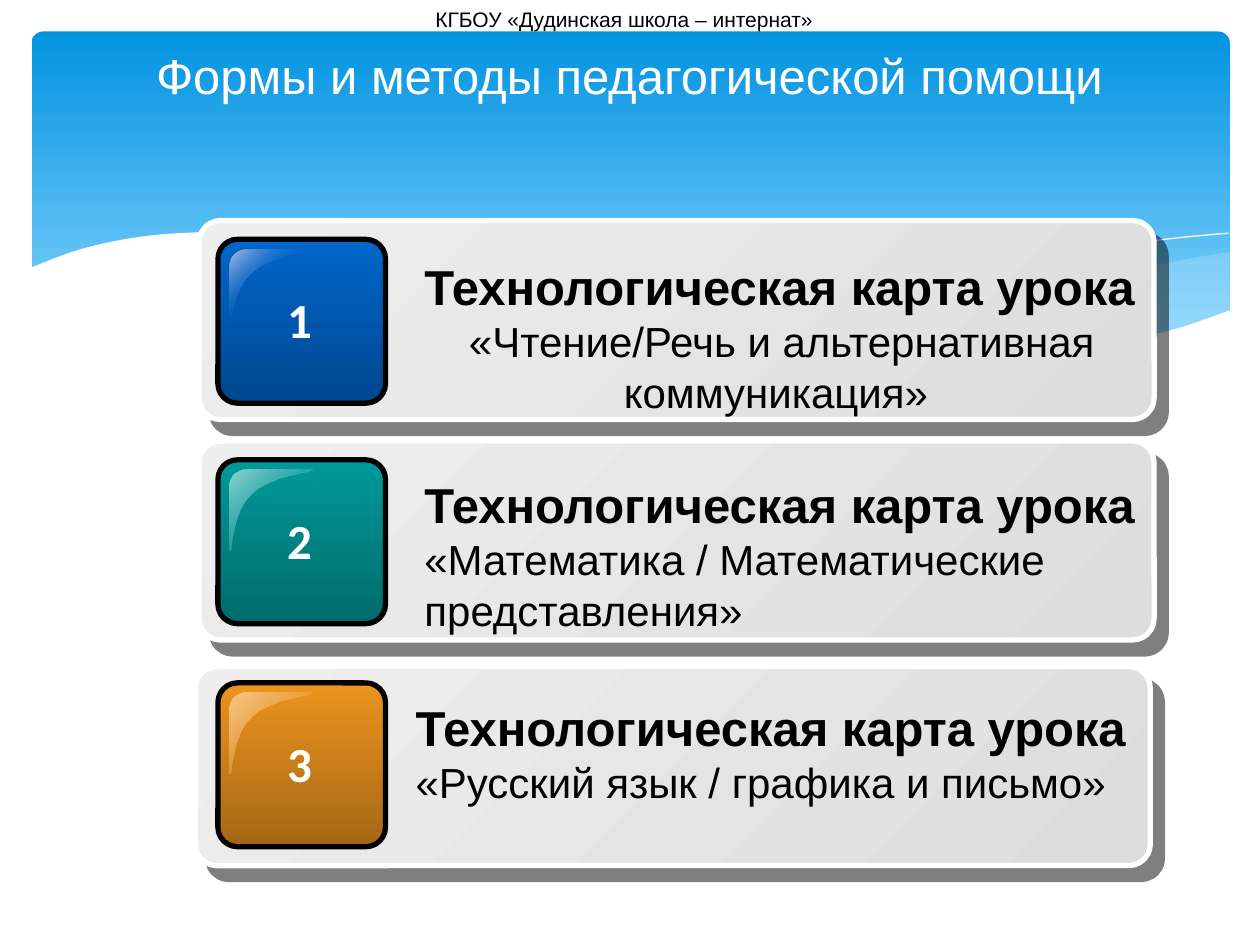
from dataclasses import dataclass

import lxml.etree
import pptx
import pptx.dml.color
import pptx.enum.shapes
import pptx.enum.text
import pptx.oxml.ns
import pptx.util

Inches = pptx.util.Inches
Pt = pptx.util.Pt
qn = pptx.oxml.ns.qn
CENTER = pptx.enum.text.PP_ALIGN.CENTER


@dataclass(frozen=True)
class Theme:
    body_font: str = "Arial"
    number_font: str = "Calibri"
    heading_size: int = 28
    subject_size: int = 24
    school_size: int = 12
    white: str = "FFFFFF"
    black: str = "000000"
    haze: str = "C6E7FC"
    sky: tuple = ((0, "0293E0", 100), (90, "83D3FE", 100))
    panel: tuple = ((0, "EEEEEE", 100), (100, "DDDDDD", 100))
    blue: tuple = ((0, "0066CC", 100), (100, "00478E", 100))
    teal: tuple = ((0, "009999", 100), (100, "006B6B", 100))
    orange: tuple = ((0, "EC941E", 100), (100, "A56715", 100))
    blue_gloss: tuple = ((0, "B5C0E5", 100), (50, "0066CC", 0), (100, "B5C0E5", 100))
    teal_gloss: tuple = ((0, "93D4D4", 100), (100, "009999", 0))
    orange_gloss: tuple = ((0, "F6CB92", 100), (100, "EC941E", 0))


THEME = Theme()

# Knots of the header waves, in inches
RIGHT_HAZE_TOP = [(9.76, 2), (9.35, 2.07), (8.61, 2.23), (7.79, 2.42), (6.61, 2.65)]
RIGHT_HAZE_BOTTOM = [(6.61, 2.65), (7.19, 2.72), (7.69, 2.77), (8.24, 2.77),
                     (8.81, 2.73), (9.28, 2.63), (9.76, 2.47)]
LONG_HAZE_TOP = [(8.93, 2.73), (8.07, 2.6), (7.06, 2.4), (6.29, 2.22), (5.55, 2.05),
                 (4.89, 1.94), (4.2, 1.87), (3.61, 1.85), (2.86, 1.91)]
LONG_HAZE_BOTTOM = [(2.86, 1.91), (3.62, 2.03), (4.49, 2.22), (5.66, 2.48), (6.5, 2.64),
                    (7.22, 2.74), (7.85, 2.78), (8.38, 2.78), (8.93, 2.73)]
LONG_CREST = [(3.09, 1.95), (3.44, 1.9), (4.01, 1.87), (4.69, 1.89), (5.56, 1.97),
              (6.65, 2.13), (7.6, 2.33), (8.31, 2.51), (9.07, 2.72)]
RIGHT_CREST = [(6.13, 2.57), (6.95, 2.35), (7.76, 2.16), (8.66, 1.99), (9.24, 1.9), (9.75, 1.85)]
PAPER_EDGE = [(9.77, 2.46), (9.3, 2.62), (8.75, 2.73), (8.09, 2.77), (7.26, 2.72),
              (6.26, 2.58), (5.29, 2.39), (4.47, 2.2), (3.65, 2.02), (2.92, 1.9),
              (2.3, 1.85), (1.77, 1.84), (1.19, 1.87), (0.67, 1.97), (0.23, 2.13)]


def rgb(color):
    return pptx.dml.color.RGBColor.from_string(color)


def add_color(parent, color, alpha):
    node = lxml.etree.SubElement(parent, qn("a:srgbClr"), val=color)
    if alpha < 100:
        lxml.etree.SubElement(node, qn("a:alpha"), val=str(alpha * 1000))


def fill_solid(shape, color, alpha=100):
    shape.fill.solid()
    shape.fill.fore_color.rgb = rgb(color)
    if alpha < 100:
        node = shape.fill._xPr.find(qn("a:solidFill"))[0]
        lxml.etree.SubElement(node, qn("a:alpha"), val=str(alpha * 1000))


def fill_gradient(shape, stops, angle):
    """Fill with (position, colour, opacity) stops; the angle runs clockwise."""
    shape.fill.gradient()
    shape.fill.gradient_angle = 360 - angle
    stop_list = shape.fill._xPr.find(qn("a:gradFill")).find(qn("a:gsLst"))
    for old in list(stop_list):
        stop_list.remove(old)
    for position, color, alpha in stops:
        stop = lxml.etree.SubElement(stop_list, qn("a:gs"), pos=str(position * 1000))
        add_color(stop, color, alpha)


def set_outline(shape, color=None, width=0):
    if color is None:
        shape.line.fill.background()
    else:
        shape.line.color.rgb = rgb(color)
        shape.line.width = Pt(width)


def add_drop_shadow(shape):
    effects = shape._element.spPr.find(qn("a:effectLst"))
    shadow = lxml.etree.SubElement(effects, qn("a:outerShdw"), blurRad="0",
                                   dist=str(Pt(10.6)), dir=str(49 * 60000),
                                   algn="ctr", rotWithShape="0")
    add_color(shadow, THEME.black, 50)


def add_rounded(page, left, top, width, height, radius, stops, angle, outline=None):
    shape = page.shapes.add_shape(pptx.enum.shapes.MSO_SHAPE.ROUNDED_RECTANGLE,
                                  Inches(left), Inches(top), Inches(width), Inches(height))
    shape.adjustments[0] = radius
    shape.shadow.inherit = False
    fill_gradient(shape, stops, angle)
    set_outline(shape, outline, 3)
    return shape


def add_outline_shape(page, points, close=True):
    first, *rest = [(Inches(x), Inches(y)) for x, y in points]
    builder = page.shapes.build_freeform(*first, scale=1.0)
    builder.add_line_segments(rest, close=close)
    shape = builder.convert_to_shape()
    shape.shadow.inherit = False
    return shape


def bezier(start, pull_a, pull_b, end, steps=8):
    return [tuple((1 - t) ** 3 * a + 3 * (1 - t) ** 2 * t * b + 3 * (1 - t) * t * t * c + t ** 3 * d
                  for a, b, c, d in zip(start, pull_a, pull_b, end))
            for t in (step / steps for step in range(steps + 1))]


def smooth(knots):
    """Run a Catmull-Rom curve through the knots."""
    padded = [knots[0], *knots, knots[-1]]
    points = []
    for before, start, end, after in zip(padded, padded[1:], padded[2:], padded[3:]):
        pull_a = [s + (e - b) / 6 for b, s, e in zip(before, start, end)]
        pull_b = [e - (a - s) / 6 for s, e, a in zip(start, end, after)]
        points += bezier(start, pull_a, pull_b, end)
    return points


def write(para, text, *, size, color, font=THEME.body_font, bold=False, align=None, indent=0):
    span = para.add_run()
    span.text = text
    span.font.name, span.font.size, span.font.bold = font, Pt(size), bold
    span.font.color.rgb = rgb(color)
    para.alignment = align
    if indent:
        props = para._p.get_or_add_pPr()
        props.set("marL", str(Inches(indent)))
        props.set("indent", "0")


def add_text(page, left, top, width, height, lines, wrap=True):
    """Add a text box; lines holds (text, format) pairs, one a paragraph."""
    box = page.shapes.add_textbox(Inches(left), Inches(top), Inches(width), Inches(height))
    frame = box.text_frame
    frame.word_wrap = wrap
    for index, (text, style) in enumerate(lines):
        para = frame.add_paragraph() if index else frame.paragraphs[0]
        write(para, text, **style)


def add_header(page):
    add_rounded(page, 0.25, 0.25, 9.51, 2.7, 0.034, THEME.sky, 90)
    for top, bottom, alpha in ((RIGHT_HAZE_TOP, RIGHT_HAZE_BOTTOM, 29),
                               (LONG_HAZE_TOP, LONG_HAZE_BOTTOM, 40)):
        haze = add_outline_shape(page, smooth(top) + smooth(bottom))
        fill_solid(haze, THEME.haze, alpha)
        set_outline(haze)
    for knots in (LONG_CREST, RIGHT_CREST):
        crest = add_outline_shape(page, smooth(knots), close=False)
        crest.fill.background()
        set_outline(crest, THEME.white)
    paper = add_outline_shape(page, smooth(PAPER_EDGE) + [(0.23, 3.29), (9.77, 3.29)])
    fill_solid(paper, THEME.white)
    set_outline(paper)


def add_badge(page, number, top, stops, gloss_stops):
    add_rounded(page, 1.73, top, 1.33, 1.3, 0.119, stops, 90, THEME.black)
    x, y = 1.82, top + 0.08
    curves = (((0.13, 0), (0.06, 0), (0, 0.06), (0, 0.13)),
              ((0, 0.64), (0.03, 0.65), (0.01, 0.33), (0.18, 0.19)),
              ((0.18, 0.19), (0.34, 0.04), (0.66, 0.03), (0.66, 0)))
    gloss = add_outline_shape(page, [(x + dx, y + dy) for curve in curves for dx, dy in bezier(*curve)])
    fill_gradient(gloss, gloss_stops, 45)
    set_outline(gloss)
    style = dict(size=THEME.heading_size, color=THEME.white, font=THEME.number_font, bold=True)
    add_text(page, 2.18, top + 0.35, 0.42, 0.57, [(str(number), style)], wrap=False)


def add_card(page, number, panel_at, badge_top, text_at, subject, align, stops, gloss_stops):
    panel = add_rounded(page, *panel_at, 7.58, 1.58, 0.109, THEME.panel, 45, THEME.white)
    add_drop_shadow(panel)
    add_badge(page, number, badge_top, stops, gloss_stops)
    shared = dict(color=THEME.black, indent=0.15)
    add_text(page, *text_at, [
        ("Технологическая карта урока", dict(shared, size=THEME.heading_size, bold=True)),
        (subject, dict(shared, size=THEME.subject_size, align=align))])


def main():
    deck = pptx.Presentation()
    deck.slide_width, deck.slide_height = Inches(10), Inches(7.5)
    page = deck.slides.add_slide(deck.slide_layouts[6])
    add_header(page)
    add_text(page, 0.23, 0.31, 9.53, 0.57, [("Формы и методы педагогической помощи", dict(
        size=THEME.heading_size, color=THEME.white, align=CENTER))])
    cards = (
        ((1.58, 1.75), 1.9, (3.12, 1.99, 6.02, 2.05), "«Чтение/Речь и альтернативная коммуникация» ",
         CENTER, THEME.blue, THEME.blue_gloss),
        ((1.58, 3.5), 3.65, (3.12, 3.72, 6.02, 2.15), "«Математика / Математические представления»",
         None, THEME.teal, THEME.teal_gloss),
        ((1.55, 5.29), 5.42, (3.05, 5.49, 6.09, 1.68), "«Русский язык / графика и письмо»",
         None, THEME.orange, THEME.orange_gloss))
    for number, card in enumerate(cards, 1):
        add_card(page, number, *card)
    add_text(page, 0.23, 0, 9.45, 0.3, [("КГБОУ «Дудинская школа – интернат»", dict(
        size=THEME.school_size, color=THEME.black, align=CENTER))])
    deck.save("out.pptx")


if __name__ == "__main__":
    main()
